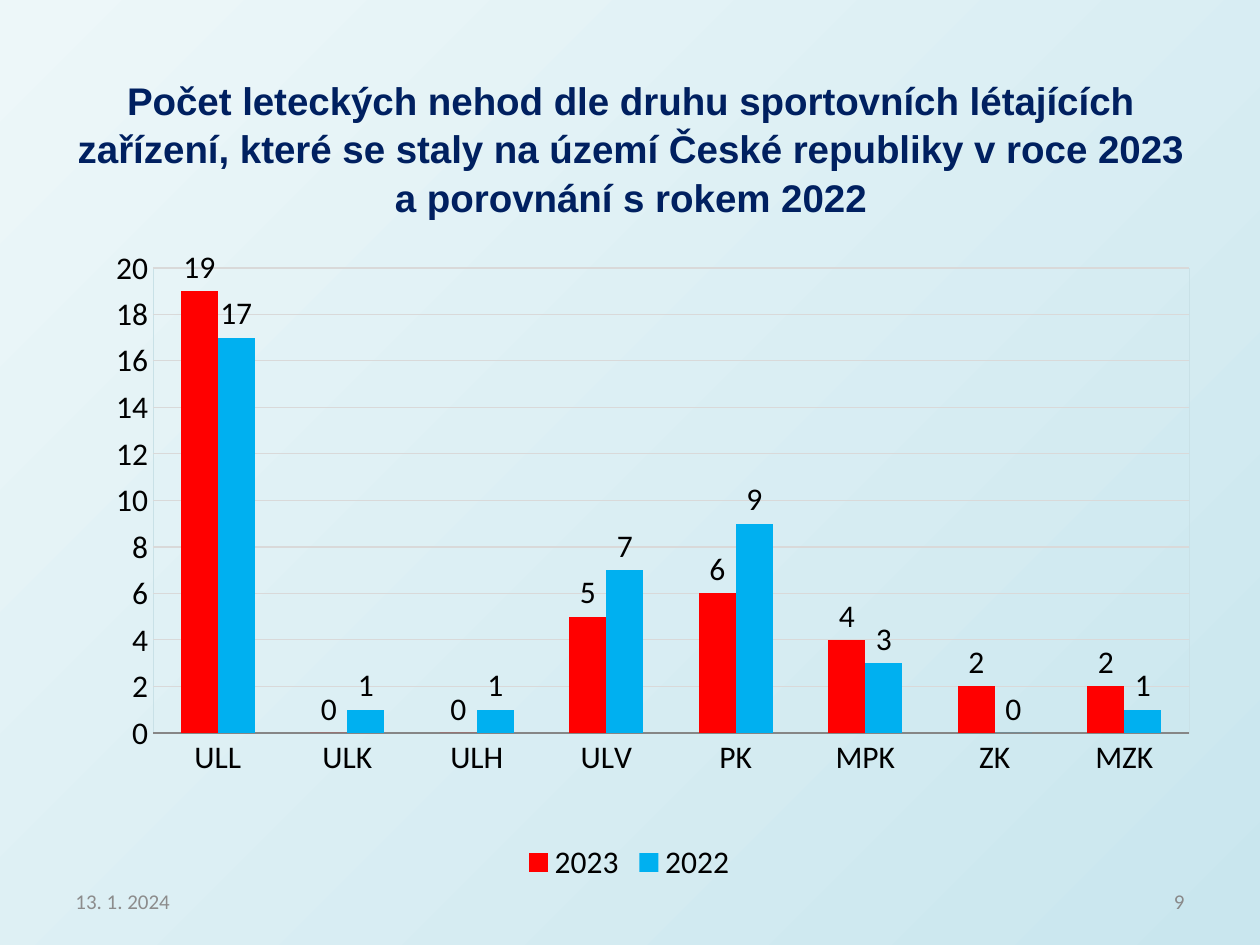
from pptx import Presentation
from pptx.chart.data import CategoryChartData
from pptx.dml.color import RGBColor
from pptx.enum.chart import XL_CHART_TYPE as ChartType, XL_LABEL_POSITION as LabelPos
from pptx.enum.chart import XL_LEGEND_POSITION as LegendPos, XL_TICK_MARK as Tick
from pptx.enum.text import MSO_ANCHOR as Anchor, MSO_AUTO_SIZE as AutoSize, PP_ALIGN as Align
from pptx.oxml import parse_xml
from pptx.oxml.ns import nsdecls, qn
from pptx.util import Emu, Pt

KINDS = ["ULL", "ULK", "ULH", "ULV", "PK", "MPK", "ZK", "MZK"]
ACCIDENTS = {
    "2023": ([19, 0, 0, 5, 6, 4, 2, 2], "FF0000"),
    "2022": ([17, 1, 1, 7, 9, 3, 0, 1], "00B0F0"),
}
HEADING = ("Počet leteckých nehod dle druhu sportovních létajících zařízení, "
           "které se staly na území České republiky v roce 2023 "
           "a porovnání s rokem 2022")
PLOT_BOX = {"x": 0.075, "y": 0.08, "w": 0.925, "h": 0.69}


def px(length):
    return Emu(round(length * 914400 / 126))


def rgb(color):
    return RGBColor.from_string(color)


def style_font(font, size, color, name="Calibri", bold=False):
    font.size = Pt(size)
    font.name = name
    font.bold = bold
    font.color.rgb = rgb(color)


def paint_background(slide):
    fill = slide.background.fill
    fill.gradient()
    fill.gradient_angle = 315
    for stop, color, position in zip(fill.gradient_stops, ("EDF7F9", "C9E6EE"), (0, 1)):
        stop.color.rgb = rgb(color)
        stop.position = position


def place_title(slide, left, top, width, height):
    title = slide.shapes.title
    title.left, title.top, title.width, title.height = map(px, (left, top, width, height))
    frame = title.text_frame
    frame.text = HEADING
    frame.word_wrap = True
    frame.auto_size = AutoSize.NONE
    frame.vertical_anchor = Anchor.MIDDLE
    frame.margin_bottom = px(48)
    heading = frame.paragraphs[0]
    heading.alignment = Align.CENTER
    heading.line_spacing = 1.05
    style_font(heading.runs[0].font, 22, "002060", "Arial", True)


def place_footer(slide, left, top, width, height):
    part_width = 294
    parts = [("13. 1. 2024", left, Align.LEFT, "8C8C8C"),
             ("9", left + width - part_width, Align.RIGHT, "898989")]
    for text, part_left, alignment, color in parts:
        frame = slide.shapes.add_textbox(*map(px, (part_left, top, part_width, height))).text_frame
        frame.text = text
        frame.word_wrap = True
        frame.vertical_anchor = Anchor.MIDDLE
        frame.paragraphs[0].alignment = alignment
        style_font(frame.paragraphs[0].runs[0].font, 12, color)


def fix_plot_area(chart):
    area = chart.element.find(".//" + qn("c:plotArea"))
    for old_layout in area.findall(qn("c:layout")):
        area.remove(old_layout)
    modes = "".join(f'<c:{side}Mode val="edge"/>' for side in "xy")
    sizes = "".join(f'<c:{side} val="{share}"/>' for side, share in PLOT_BOX.items())
    area.insert(0, parse_xml(
        f'<c:layout {nsdecls("c")}><c:manualLayout><c:layoutTarget val="inner"/>'
        f'{modes}{sizes}</c:manualLayout></c:layout>'))
    area.append(parse_xml(
        f'<c:spPr {nsdecls("c", "a")}><a:noFill/><a:ln w="3175"><a:solidFill>'
        '<a:srgbClr val="C9E1E7"/></a:solidFill></a:ln></c:spPr>'))


def format_axes(chart):
    kinds, counts = chart.category_axis, chart.value_axis
    for axis in (kinds, counts):
        axis.major_tick_mark = axis.minor_tick_mark = Tick.NONE
    kinds.format.line.color.rgb = rgb("868686")
    kinds.format.line.width = Pt(1)
    counts.format.line.fill.background()
    counts.minimum_scale, counts.maximum_scale, counts.major_unit = 0, 20, 2
    counts.has_major_gridlines = True
    grid = counts.major_gridlines.format.line
    grid.color.rgb = rgb("D9D9D9")
    grid.width = Pt(0)


def place_chart(slide, left, top, width, height):
    data = CategoryChartData()
    data.categories = KINDS
    for year, (counts, _) in ACCIDENTS.items():
        data.add_series(year, counts)
    chart = slide.shapes.add_chart(
        ChartType.COLUMN_CLUSTERED, *map(px, (left, top, width, height)), data).chart
    chart.has_title = False
    style_font(chart.font, 18, "000000")
    chart.has_legend = True
    chart.legend.position = LegendPos.BOTTOM
    chart.legend.include_in_layout = False
    format_axes(chart)

    columns = chart.plots[0]
    columns.gap_width = 150
    columns.overlap = 0
    columns.vary_by_categories = False
    for year, (_, color) in zip(columns.series, ACCIDENTS.values()):
        year.format.fill.solid()
        year.format.fill.fore_color.rgb = rgb(color)
        year.invert_if_negative = False
        labels = year.data_labels
        labels.show_value = True
        labels.position = LabelPos.OUTSIDE_END
        style_font(labels.font, 18, "000000")
    fix_plot_area(chart)


def main():
    deck = Presentation()
    deck.slide_width, deck.slide_height = px(1260), px(945)
    slide = deck.slides.add_slide(deck.slide_layouts[5])
    paint_background(slide)
    place_footer(slide, 63, 876, 1134, 50)
    place_title(slide, 64, 89, 1134, 158)
    place_chart(slide, 69, 214, 1121, 674)
    deck.save("out.pptx")


if __name__ == "__main__":
    main()
